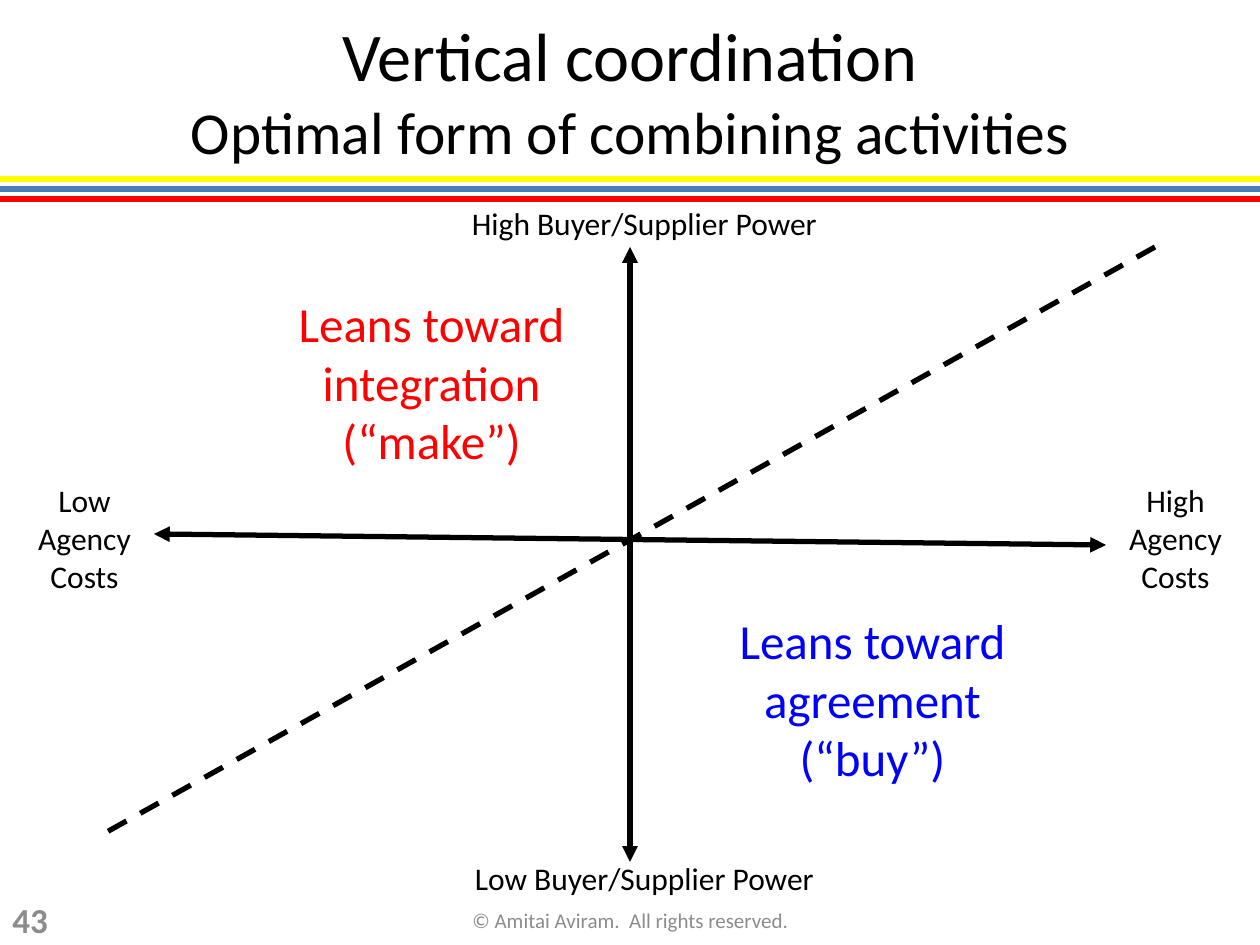
from pptx import Presentation, util as u
from pptx.dml.color import RGBColor
from pptx.enum import dml, shapes, text
from pptx.oxml.ns import qn
from lxml import etree

HUES = {"black": "000000", "red": "FF0000", "blue": "0000FF",
        "steel": "4B7EBC", "yellow": "FFFF00", "gray": "8C8C8C"}
SCALE = 914400 / 126


def px(num):
    return u.Emu(round(num * SCALE))


class Page:
    font = "Calibri"
    weight = 3

    def __init__(self, deck):
        self.slide = deck.slides.add_slide(deck.slide_layouts[6])

    def line(self, start, end, hue="black", heads=False, dash=False):
        ends = [px(num) for num in (*start, *end)]
        link = self.slide.shapes.add_connector(shapes.MSO_CONNECTOR.STRAIGHT, *ends)
        link.line.width = u.Pt(self.weight)
        link.line.color.rgb = RGBColor.from_string(HUES[hue])
        if dash:
            link.line.dash_style = dml.MSO_LINE.DASH
        if heads:
            for tag in ("a:headEnd", "a:tailEnd"):
                etree.SubElement(link.line._get_or_add_ln(), qn(tag), type="triangle")
        etree.SubElement(link._element.spPr, qn("a:effectLst"))

    def label(self, box, words, size, hue="black", middle=False, bold=False,
              align=text.PP_ALIGN.CENTER):
        frame = self.slide.shapes.add_textbox(*map(px, box)).text_frame
        frame.word_wrap = True
        if middle:
            frame.vertical_anchor = text.MSO_ANCHOR.MIDDLE
        para = frame.paragraphs[0]
        para.text = words
        para.alignment = align
        para.font.name = self.font
        para.font.size = u.Pt(size)
        para.font.bold = bold
        para.font.color.rgb = RGBColor.from_string(HUES[hue])
        return para


def main():
    deck = Presentation()
    deck.slide_width, deck.slide_height = px(1260), px(945)
    page = Page(deck)

    for row, hue in enumerate(("yellow", "steel", "red")):
        top = 179 + 10 * row
        page.line((0, top), (1260, top), hue)

    title = page.label((0, 0, 1260, 179), "Vertical coordination\v", 39, middle=True)
    lower = title.add_run()
    lower.text = "Optimal form of combining activities"
    lower.font.size = u.Pt(34)

    page.line((630, 247), (630, 862), heads=True)
    page.line((1106, 545), (154, 534), heads=True)
    page.line((1155, 247), (105, 833), dash=True)

    for top, level in ((198, "High"), (853, "Low")):
        page.label((272, top, 745, 50), f"{level} Buyer/Supplier Power", 18)
    for left, level in ((5, "Low\v"), (1096, "High ")):
        page.label((left, 475, 159, 126), f"{level}Agency Costs", 18)

    page.label((243, 287, 377, 189), "Leans toward integration\v(“make”)", 28, "red")
    page.label((689, 604, 367, 190), "Leans toward agreement\v(“buy”)", 28, "blue")

    page.label((0, 895, 84, 50), "43", 20, "gray", middle=True, bold=True,
               align=text.PP_ALIGN.LEFT)
    page.label((431, 895, 399, 50), "© Amitai Aviram.  All rights reserved.", 12,
               "gray", middle=True)

    deck.save("out.pptx")


if __name__ == "__main__":
    main()
